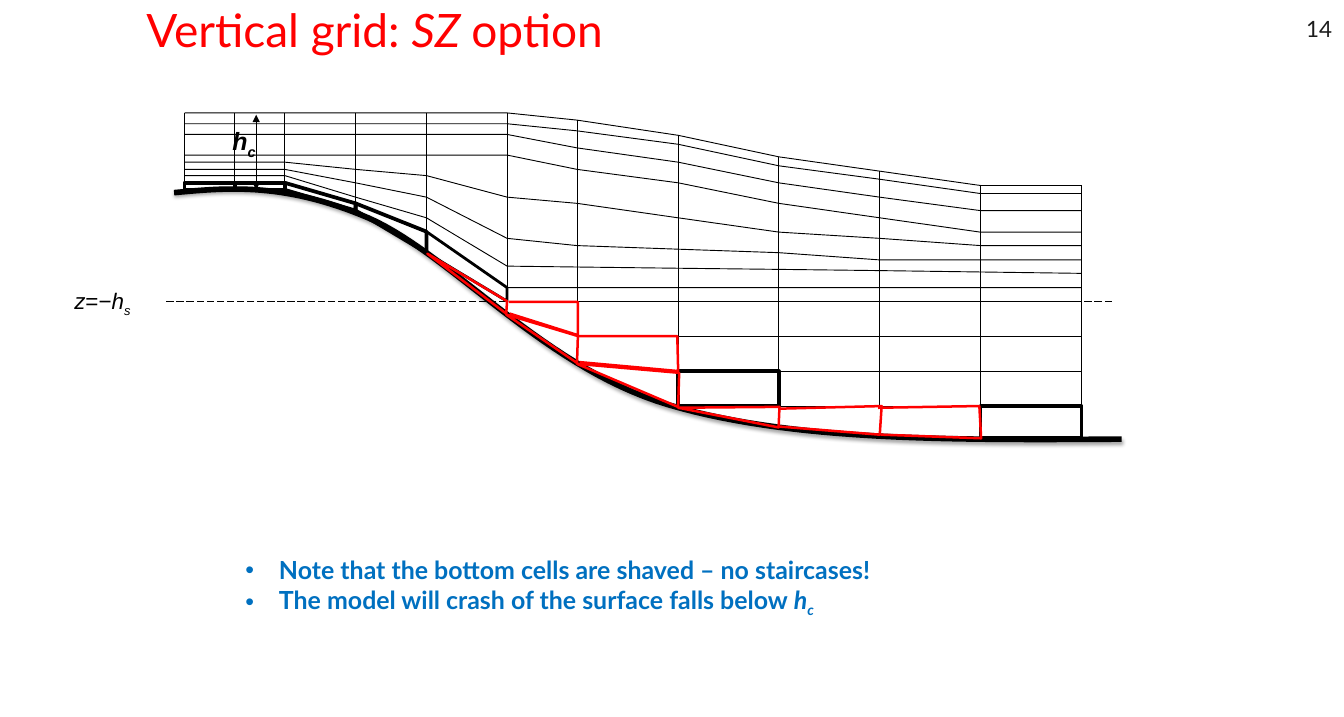
from lxml.etree import SubElement
from pptx import Presentation
from pptx.dml.color import RGBColor
from pptx.enum.dml import MSO_LINE
from pptx.enum.shapes import MSO_CONNECTOR, MSO_SHAPE
from pptx.enum.text import MSO_ANCHOR, PP_ALIGN
from pptx.oxml.ns import qn
from pptx.util import Pt

BLACK = RGBColor(0x00, 0x00, 0x00)
RED = RGBColor(0xFF, 0x00, 0x00)
BLUE = RGBColor(0x00, 0x70, 0xC0)
DARK = RGBColor(0x1C, 0x1C, 0x1C)

deck = Presentation()
deck.slide_width, deck.slide_height = Pt(1080), Pt(576)
page = deck.slides.add_slide(deck.slide_layouts[6])


def draw_outline(points, colour, width, closed=False):
    corners = [(Pt(x), Pt(y)) for x, y in points]
    builder = page.shapes.build_freeform(*corners[0])
    builder.add_line_segments(corners[1:], close=closed)
    outline = builder.convert_to_shape()
    outline.shadow.inherit = False
    outline.fill.background()
    outline.line.color.rgb = colour
    outline.line.width = Pt(width)
    return outline


def write_text(frame, paragraphs, font, size, colour, insets=(7.2, 3.6), bold=False, wrap=True):
    """Each paragraph is a list of (text, style); style holds i for italic, s for subscript."""
    box = page.shapes.add_textbox(*[Pt(length) for length in frame])
    body = box.text_frame
    body.word_wrap = wrap
    body.margin_left = body.margin_right = Pt(insets[0])
    body.margin_top = body.margin_bottom = Pt(insets[1])
    for number, runs in enumerate(paragraphs):
        para = body.add_paragraph() if number else body.paragraphs[0]
        for text, style in runs:
            span = para.add_run()
            span.text = text
            span.font.name = font
            span.font.size = Pt(size)
            span.font.color.rgb = colour
            span.font.bold = bold
            span.font.italic = "i" in style
            if "s" in style:
                span.font._element.set("baseline", "-25000")
    return body


# Page number and title
number_body = write_text((1016.6, 0, 63.4, 38.2), [[("14", "")]], "Lato", 18, DARK, (9.6, 4.8))
number_body.vertical_anchor = MSO_ANCHOR.BOTTOM
number_body.paragraphs[0].alignment = PP_ALIGN.RIGHT
title_body = write_text((108, 6.5, 800.6, 43.9),
                        [[("Vertical grid: ", ""), ("SZ ", "i"), ("option", "")]],
                        "Lato", 37, RED, (9.6, 4.8))
title_body.vertical_anchor = MSO_ANCHOR.BOTTOM

# Sea bed: cubic curves sampled at equal steps
STEPS = 30
bed_controls = [(139.9, 154.8), (184.3, 150.5), (229.7, 146.9), (295.9, 175),
                (362.2, 203.8), (437, 295.9), (537.8, 325.4),
                (638.6, 355), (770.4, 353.5), (901.4, 352.8)]
bed_points = [bed_controls[0]]
for first in range(0, 9, 3):
    curve = bed_controls[first:first + 4]
    for step in range(1, STEPS + 1):
        t = step / STEPS
        weights = ((1 - t) ** 3, 3 * t * (1 - t) ** 2, 3 * t ** 2 * (1 - t), t ** 3)
        bed_points.append(tuple(sum(w * point[axis] for w, point in zip(weights, curve))
                                for axis in (0, 1)))
sea_bed = draw_outline(bed_points, BLACK, 4.5)
effects = sea_bed._element.spPr.find(qn("a:effectLst"))
shadow = SubElement(effects, qn("a:outerShdw"), blurRad=str(Pt(3.1)), dist=str(Pt(1.8)),
                    dir="5400000", rotWithShape="0")
shadow_colour = SubElement(shadow, qn("a:srgbClr"), val="000000")
SubElement(shadow_colour, qn("a:alpha"), val="35000")

# Grid columns and the levels that follow the terrain, west to east
columns = [148.3, 188.6, 229, 285.8, 342.7, 407.5, 463.7, 545, 625.9, 707, 787.9, 869]
surface = [90.7] * 6 + [96.5, 108.7, 126, 137.5, 149, 149]
lowest = [146.9] * 3 + [163.4, 186.1] + [231.1] * 7
foot = [152.6] * 3 + [169.2, 203] + [242] * 7
levels = [
    surface,
    [99.4] * 6 + [105.1, 115.9, 133.2, 144, 155.5, 155.5],
    [108] * 6 + [118.8, 130.3, 146.9, 158.4, 169.2, 169.2],
    [124.6] * 6 + [136.1, 146.9, 163.4, 175, 186.5, 186.5],
    [130.3] * 3 + [136.1, 141.1, 158.4, 163.4, 175, 186.5, 191.5, 197.3, 197.3],
    [136.1] * 3 + [146.9, 158.4, 191.5, 197.3, 200.2, 203] + [208.8] * 3,
    [141.1] * 3 + [158.4, 175, 213.8, 214.5, 215.5, 216.4, 217.4, 218.5, 219.6],
    lowest,
]

# Flat cells below z = -hs: (top, height, first column, bold column)
flat_rows = [(242, 28.1, 6, None), (270.1, 28.1, 7, None),
             (298.2, 28.1, 7, 7), (326.3, 25.9, 10, 10)]
for top, height, first, bold_column in flat_rows:
    # The top row also holds the first cell east of the slope
    for column in range(first, 11):
        left, right = columns[column:column + 2]
        cell = page.shapes.add_shape(MSO_SHAPE.RECTANGLE, Pt(left), Pt(top),
                                     Pt(right - left), Pt(height))
        cell.shadow.inherit = False
        cell.fill.background()
        cell.line.color.rgb = BLACK
        cell.line.width = Pt(3 if column == bold_column else 0.75)

# Levels and the bold bottom cells on the slope
for level in levels:
    draw_outline(zip(columns, level), BLACK, 0.75)
for west in range(5):
    east = west + 1
    draw_outline([(columns[east], foot[east]), (columns[east], lowest[east]),
                  (columns[west], lowest[west]), (columns[west], foot[west])],
                 BLACK, 2.25 if west == 4 else 3, closed=True)

# Column lines, the z = -hs line and the hc arrow
lines = [(x, low, x, high) for x, low, high in zip(columns, foot, surface)]
lines += [(893.5, 242, 131.8, 242), (205.9, 92.2, 205.9, 152.6)]
connectors = []
for ends in lines:
    connector = page.shapes.add_connector(MSO_CONNECTOR.STRAIGHT, *[Pt(end) for end in ends])
    connector.line.color.rgb = BLACK
    connector.line.width = Pt(0.75)
    SubElement(connector._element.spPr, qn("a:effectLst"))
    connectors.append(connector)
hs_line, hc_arrow = connectors[-2:]
hs_line.line.dash_style = MSO_LINE.LONG_DASH
for end in ("a:headEnd", "a:tailEnd"):
    SubElement(hc_arrow.line._get_or_add_ln(), qn(end), type="triangle")

# Shaved cells in red: (closed, corners)
shaved_cells = [
    (True, [(343.4, 203.8), (407.5, 242), (406.8, 252)]),
    (False, [(409, 242.6), (464.4, 242.6), (464.4, 269.3), (409.7, 252)]),
    (True, [(406.8, 252.7), (464.4, 270), (463.7, 291.6)]),
    (False, [(463.7, 270), (544.3, 270), (545, 298.1), (465.8, 290.9)]),
    (True, [(463.7, 292.3), (545.8, 299.5), (545, 326.9)]),
    (True, [(545, 327.6), (626.4, 326.9), (625.7, 343.4)]),
    (False, [(626.4, 328.3), (708.5, 326.2), (707, 349.2), (626.4, 342.7)]),
    (False, [(705.6, 327.6), (787, 326.2), (788.4, 352.1), (707.8, 349.2)]),
]
for closed, corners in shaved_cells:
    draw_outline(corners, RED, 2, closed)

# Labels
write_text((52.6, 227.5, 60.5, 28.8), [[("z", "i"), ("=−", ""), ("h", "i"), ("s", "is")]],
           "Arial", 18, BLACK, wrap=False)
write_text((177.1, 96.5, 38.9, 33.8), [[("h", "i"), ("c", "is")]],
           "Arial", 20, BLACK, (9.6, 4.8), bold=True, wrap=False)

# Notes under the grid
notes = [[("Note that the bottom cells are shaved – no staircases!", "")],
         [("The model will crash of the surface falls below ", ""), ("h", "i"), ("c", "is")]]
notes_body = write_text((190.1, 442.1, 665.3, 55.4), notes, "Lato", 20, BLUE, bold=True)
for para in notes_body.paragraphs:
    properties = para._p.get_or_add_pPr()
    properties.set("marL", str(Pt(27)))
    properties.set("indent", str(Pt(-27)))
    SubElement(properties, qn("a:buFont"), typeface="Arial")
    SubElement(properties, qn("a:buChar"), char="•")

deck.save("out.pptx")
